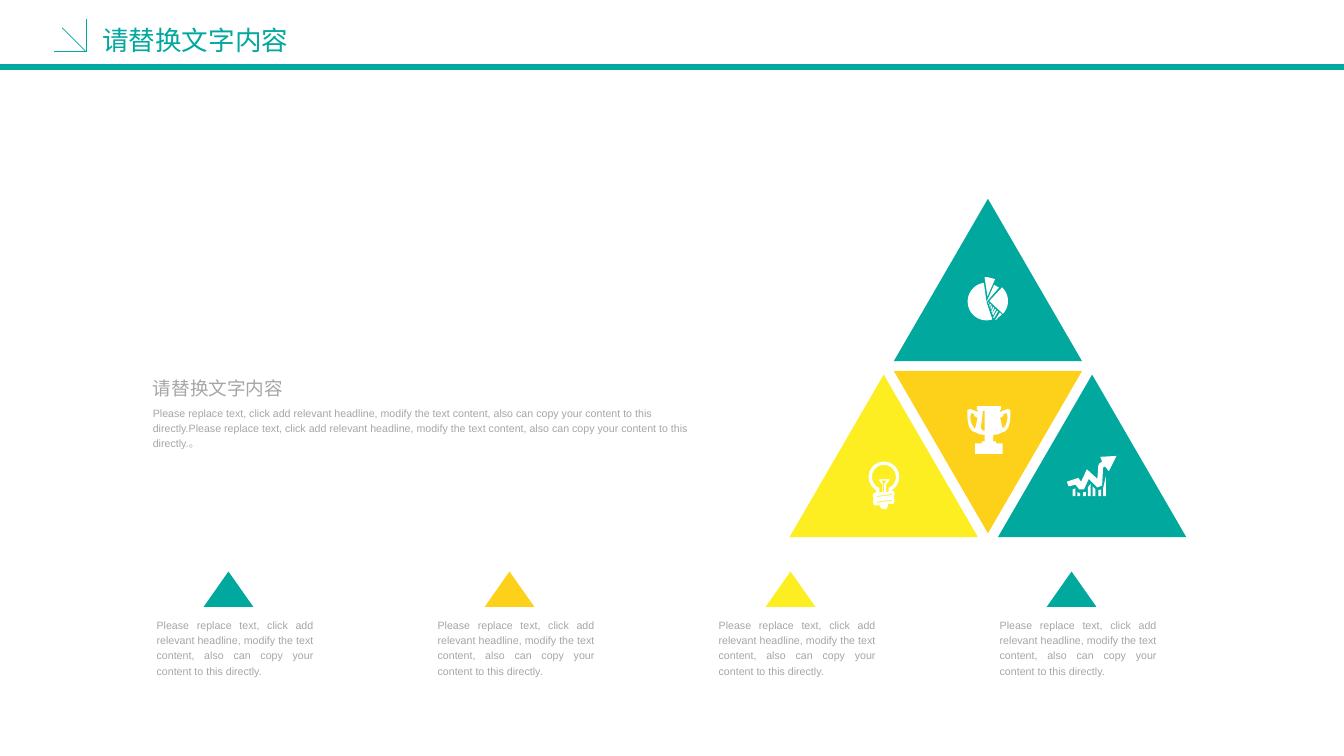
from math import cos, radians, sin

from lxml.etree import SubElement
from pptx import Presentation
from pptx.dml.color import RGBColor
from pptx.enum.shapes import MSO_CONNECTOR as Connector, MSO_SHAPE as Preset
from pptx.enum.text import MSO_ANCHOR as Anchor, PP_ALIGN as Align
from pptx.oxml.ns import qn
from pptx.util import Inches, Pt

TEAL = RGBColor(0x01, 0xA8, 0x9E)
AMBER = RGBColor(0xFD, 0xD0, 0x1A)
YELLOW = RGBColor(0xFD, 0xEE, 0x21)
GREY = RGBColor(0xA6, 0xA6, 0xA6)
WHITE = RGBColor(0xFF, 0xFF, 0xFF)

HEADLINE = "请替换文字内容"
SENTENCE = ("Please replace text, click add relevant headline, modify the text "
            "content, also can copy your content to this directly.")


def paint(shape, color):
    shape.fill.solid()
    shape.fill.fore_color.rgb = color
    shape.line.fill.background()
    shape.shadow.inherit = False


def add_rule(slide, start, end, weight):
    rule = slide.shapes.add_connector(
        Connector.STRAIGHT, *map(Inches, start + end))
    rule.line.color.rgb = TEAL
    rule.line.width = Pt(weight)
    SubElement(rule._element.spPr, qn("a:effectLst"))


def add_triangle(slide, left, top, width, height, color, rotation=0):
    triangle = slide.shapes.add_shape(
        Preset.ISOSCELES_TRIANGLE, *map(Inches, (left, top, width, height)))
    triangle.rotation = rotation
    paint(triangle, color)


def add_text(slide, left, top, width, height, text, size, color=GREY,
             align=Align.LEFT, anchor=Anchor.TOP, wrap=True):
    box = slide.shapes.add_textbox(*map(Inches, (left, top, width, height)))
    frame = box.text_frame
    frame.word_wrap = wrap
    frame.vertical_anchor = anchor
    frame.text = text
    paragraph = frame.paragraphs[0]
    paragraph.alignment = align
    paragraph.line_spacing = 1.2
    font = paragraph.runs[0].font
    font.name = "Arial"
    font.size = Pt(size)
    font.color.rgb = color


def add_icon(slide, left, top, contours):
    """Draw closed contours given in hundredths of an inch from left, top."""
    placed = [[(Inches(left + x / 100), Inches(top + y / 100)) for x, y in contour]
              for contour in contours]
    builder = slide.shapes.build_freeform(*placed[0][0])
    builder.add_line_segments(placed[0][1:])
    for contour in placed[1:]:
        builder.move_to(*contour[0])
        builder.add_line_segments(contour[1:])
    paint(builder.convert_to_shape(), WHITE)


def arc(x, y, radius, start, end, steps=36):
    angles = [radians(start + (end - start) * i / steps) for i in range(steps + 1)]
    return [(x + radius * cos(a), y + radius * sin(a)) for a in angles]


def mirrored(points, width):
    return [(width - x, y) for x, y in points]


def pie_contours():
    body = [(28, 8), (20, 26), *arc(20, 25.5, 19.7, 262, 72), (20, 26), (33, 11)]
    right_slice = [(23, 25), *arc(23, 25, 19.5, -47, 43)]
    top_slice = [(21, 20), (18, 0), (21, 0), (25, 1), (29, 2)]
    hatching = [
        [(36, 39), (33, 42), (35, 38)],
        [(31, 44), (35, 38), (34, 37), (29, 45)],
        [(28, 43), (32, 36), (31, 35), (27, 42)],
        [(27, 40), (30, 34), (29, 33), (26, 38)],
        [(26, 37), (28, 32), (27, 31), (25, 36)],
        [(25, 34), (26, 30), (26, 29), (24, 32)],
        [(23, 31), (25, 29), (24, 28), (23, 29)],
        [(22, 28), (22, 26), (23, 27)],
    ]
    return [body, right_slice, top_slice, *hatching]


def trophy_contours():
    width = 45
    half = [(10, 0), (10, 4), (11, 4), (11, 6), (3, 3), (0, 4), (0, 11),
            (0.6, 17), (2, 22), (5, 26), (10, 28), (13, 29.5), (18, 30),
            (18, 37), (15, 37), (15, 39), (8, 39), (8, 50)]
    handle = [(11, 11), (8, 24), (5, 20), (3.5, 16), (3, 11), (4, 7),
              (8, 9), (7, 10), (10, 12)]
    shine = [(18, 5), (18, 26), (15.5, 25), (14, 23), (16, 8), (16, 5)]
    return [half + mirrored(half, width)[::-1], handle,
            mirrored(handle, width), shine]


def growth_contours():
    arrow = [(52, 0), (44, 16), (40, 11), (38, 12), (37, 31), (32, 33), (23, 24),
             (18, 35), (13, 35), (9, 30), (2, 32), (0, 27), (12, 23), (15, 27),
             (21, 14), (32, 24), (33, 10), (34, 8), (37, 6), (35, 1)]
    # Left edge of each bar with the heights of its slanted top
    bars = [(6, 35, 34), (11, 38, 39), (17, 38, 38), (22, 33, 29),
            (27, 32, 35), (33, 36, 35), (38, 34, 21)]
    return [arrow] + [[(x, 42), (x, left_top), (x + 3, right_top), (x + 3, 42)]
                      for x, left_top, right_top in bars]


def bulb_contours():
    outline = [*arc(15.7, 16, 16, 121, 417), (24, 31), (26, 31), (27, 34),
               (26, 37), (26, 38), (27, 41), (26, 44), (7, 46), (5, 45),
               (4, 42), (5, 39), (4, 36), (5, 33), (7, 33)]
    glass = [*arc(15.7, 16, 12.5, 112, 428), (21, 31), (18, 32), (18, 24),
             (22, 19), (20, 18), (18, 19), (17, 18), (15, 19), (14, 18),
             (12, 19), (10, 19), (14, 24), (14, 32), (11, 32)]
    filament = [(19, 20), (13, 20), (15, 23), (15, 32), (16, 32), (16, 23)]
    cap = [(20, 45), (11, 46), (13, 49), (16, 50), (19, 49)]
    slits = [[(24, y), (8, y + 2), (8, y + 3), (24, y + 1)] for y in (34, 40)]
    return [outline, glass, filament, cap, *slits]


def add_header(slide):
    add_rule(slide, (0, 0.7), (14.06, 0.7), 4.5)
    corner = (0.9, 0.54)
    for tip in ((0.57, 0.54), (0.9, 0.2), (0.65, 0.29)):
        add_rule(slide, corner, tip, 0.5)
    add_text(slide, 0.97, 0.15, 2.36, 0.47, HEADLINE, 20, TEAL,
             anchor=Anchor.MIDDLE)


def add_pyramid(slide):
    width, height = 1.97, 1.7
    for left, top, color, rotation in (
            (9.35, 3.88, AMBER, 180), (9.35, 2.08, TEAL, 0),
            (10.44, 3.92, TEAL, 0), (8.26, 3.92, YELLOW, 0)):
        add_triangle(slide, left, top, width, height, color, rotation)
    add_icon(slide, 10.12, 4.25, trophy_contours())
    add_icon(slide, 10.12, 2.9, pie_contours())
    add_icon(slide, 11.16, 4.77, growth_contours())
    add_icon(slide, 9.09, 4.83, bulb_contours())


def add_columns(slide):
    for i, color in enumerate((TEAL, AMBER, YELLOW, TEAL)):
        offset = 2.94 * i
        add_triangle(slide, 2.13 + offset, 5.98, 0.52, 0.37, color)
        add_text(slide, 1.54 + offset, 6.4, 1.84, 0.73, SENTENCE, 8,
                 align=Align.JUSTIFY)


def main():
    deck = Presentation()
    deck.slide_width, deck.slide_height = Inches(14.06), Inches(7.91)
    slide = deck.slides.add_slide(deck.slide_layouts[6])

    add_header(slide)
    add_pyramid(slide)
    add_columns(slide)

    # Introduction beside the pyramid
    add_text(slide, 1.5, 3.85, 1.58, 0.36, HEADLINE, 14, wrap=False)
    add_text(slide, 1.5, 4.18, 6.11, 0.59, SENTENCE * 2 + "。", 8)

    deck.save("out.pptx")


if __name__ == "__main__":
    main()
